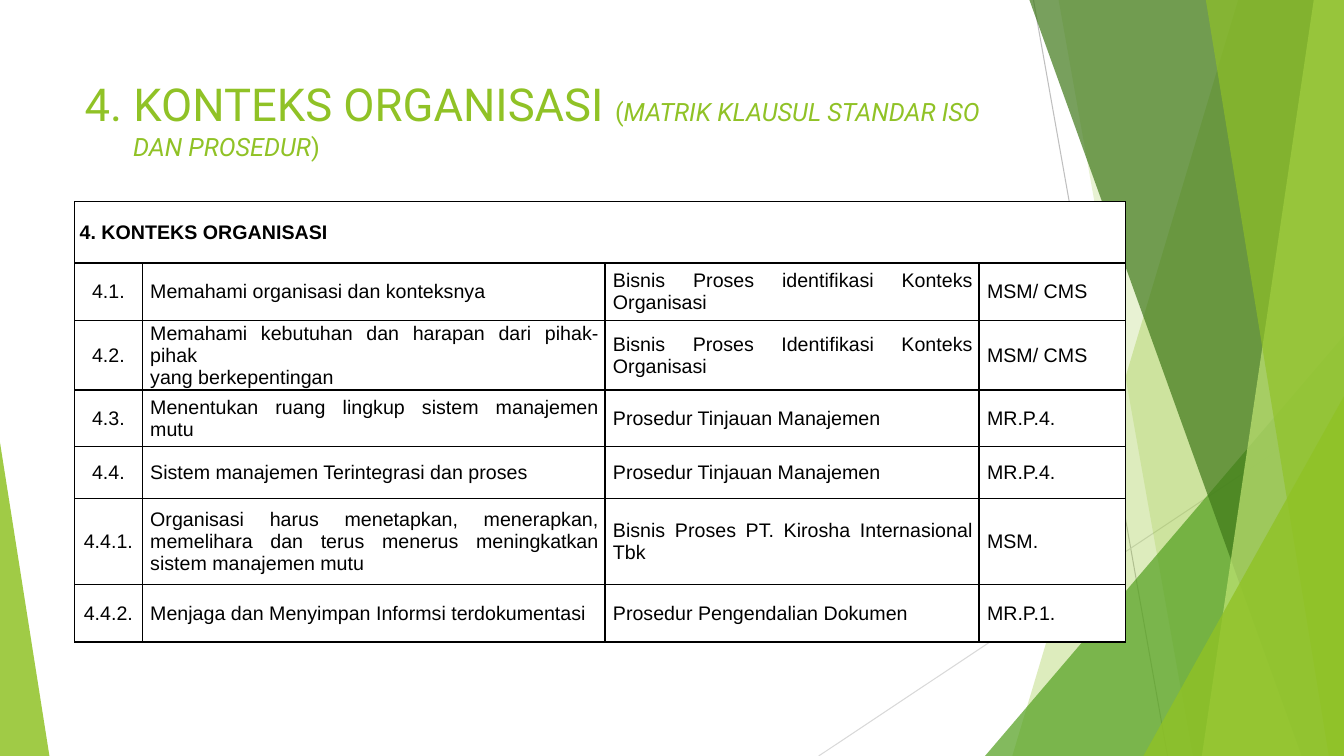
from lxml import etree
from pptx import Presentation
from pptx.dml.color import RGBColor
from pptx.enum.shapes import MSO_CONNECTOR, MSO_SHAPE
from pptx.enum.text import MSO_ANCHOR, MSO_AUTO_SIZE, PP_ALIGN
from pptx.oxml.ns import qn
from pptx.util import Inches, Pt

TRIANGLE = MSO_SHAPE.ISOSCELES_TRIANGLE
STRAIGHT = MSO_CONNECTOR.STRAIGHT
TOP, MIDDLE = MSO_ANCHOR.TOP, MSO_ANCHOR.MIDDLE
LEFT, CENTER, JUSTIFY = PP_ALIGN.LEFT, PP_ALIGN.CENTER, PP_ALIGN.JUSTIFY

WIDTH, HEIGHT = 13.33, 7.5
COLORS = {"lime": "90C226", "green": "54A021", "forest": "3F7819", "pale": "C0E474",
          "grey": "BFBFBF", "light grey": "D9D9D9", "black": "000000", "white": "FFFFFF"}

TITLE_RUNS = [
    ("4. KONTEKS ORGANISASI ", 32.4, False),
    ("(", 18, False),
    ("MATRIK KLAUSUL STANDAR ISO DAN PROSEDUR", 18, True),
    (")", 18, False),
]
TABLE_HEADING = "4. KONTEKS ORGANISASI"
CLAUSES = [
    ("4.1.", "Memahami organisasi dan konteksnya",
     "Bisnis Proses identifikasi Konteks Organisasi", "MSM/ CMS"),
    ("4.2.", "Memahami kebutuhan dan harapan dari pihak-pihak\nyang berkepentingan",
     "Bisnis Proses Identifikasi Konteks Organisasi", "MSM/ CMS"),
    ("4.3.", "Menentukan ruang lingkup sistem manajemen mutu",
     "Prosedur Tinjauan Manajemen", "MR.P.4."),
    ("4.4.", "Sistem manajemen Terintegrasi dan proses",
     "Prosedur Tinjauan Manajemen", "MR.P.4."),
    ("4.4.1.", "Organisasi harus menetapkan, menerapkan, memelihara dan terus menerus "
     "meningkatkan sistem manajemen mutu",
     "Bisnis Proses PT. Kirosha Internasional Tbk", "MSM."),
    ("4.4.2.", "Menjaga dan Menyimpan Informsi terdokumentasi",
     "Prosedur Pengendalian Dokumen", "MR.P.1."),
]
COLUMN_WIDTHS = [0.67, 4.59, 3.71, 1.45]
ROW_HEIGHTS = [0.61, 0.57, 0.69, 0.56, 0.52, 0.85, 0.57]
CONTENT_LEFT = 0.74

# Lines: start, end, colour
RAYS = [((10.25, 0), (11.58, HEIGHT), "grey"),
        ((WIDTH, 4.03), (8.12, HEIGHT), "light grey")]
# Wedges reach the right edge: top x, bottom x, colour, opacity %
# Triangles stand on the bottom edge: left, width, height, apex, colour, opacity %
FACETS = [
    ("wedge", 12.28, 10.04, "lime", 30),
    ("wedge", 10.5, 11.83, "lime", 20),
    ("triangle", 9.77, 3.56, 4.17, 1, "green", 72),
    ("wedge", 10.21, 12.91, "forest", 70),
    ("wedge", 13.03, 11.92, "pale", 70),
    ("wedge", 11.96, 13.18, "lime", 65),
    ("triangle", 11.34, 1.99, 3.57, 1, "lime", 80),
    ("triangle", 0, 0.49, 3.11, 0, "lime", 85),
]


def color(name):
    return RGBColor.from_string(COLORS[name])


def add_ray(shapes, start, end, color_name):
    ray = shapes.add_connector(STRAIGHT, *map(Inches, start + end))
    ray.line.color.rgb = color(color_name)
    ray.line.width = Pt(0.75)
    etree.SubElement(ray._element.spPr, qn("a:effectLst"))


def add_wedge(shapes, top_x, bottom_x):
    corners = [(WIDTH, 0), (WIDTH, HEIGHT), (bottom_x, HEIGHT)]
    builder = shapes.build_freeform(Inches(top_x), 0)
    builder.add_line_segments([(Inches(x), Inches(y)) for x, y in corners], close=True)
    return builder.convert_to_shape()


def add_triangle(shapes, left, width, height, apex):
    triangle = shapes.add_shape(
        TRIANGLE, *map(Inches, (left, HEIGHT - height, width, height)))
    triangle.adjustments[0] = apex
    return triangle


def add_backdrop(shapes):
    builders = {"wedge": add_wedge, "triangle": add_triangle}
    for ray in RAYS:
        add_ray(shapes, *ray)
    for kind, *geometry, color_name, opacity in FACETS:
        facet = builders[kind](shapes, *geometry)
        facet.shadow.inherit = False
        facet.line.fill.background()
        facet.fill.solid()
        facet.fill.fore_color.rgb = color(color_name)
        fill_color = facet._element.spPr.find(".//" + qn("a:srgbClr"))
        etree.SubElement(fill_color, qn("a:alpha"), val=str(opacity * 1000))


def set_format(target, **values):
    for name, value in values.items():
        setattr(target, name, value)


def indent(paragraph, margin, first_line=0):
    properties = paragraph._p.get_or_add_pPr()
    properties.set("marL", str(Inches(margin)))
    properties.set("indent", str(Inches(first_line)))


def fill_title(title):
    set_format(title, left=Inches(CONTENT_LEFT), top=Inches(0.67),
               width=Inches(9.4), height=Inches(0.89))
    set_format(title.text_frame, word_wrap=True, auto_size=MSO_AUTO_SIZE.NONE,
               vertical_anchor=TOP, margin_top=Inches(0.09))
    paragraph = title.text_frame.paragraphs[0]
    paragraph.alignment = LEFT
    indent(paragraph, 0.48, -0.48)
    for text, size, italic in TITLE_RUNS:
        run = paragraph.add_run()
        run.text = text
        set_format(run.font, name="Roboto", size=Pt(size), italic=italic)
        run.font.color.rgb = color("lime")


def add_borders(cell):
    properties = cell._tc.get_or_add_tcPr()
    for side in ("lnL", "lnR", "lnT", "lnB"):
        line = etree.SubElement(properties, qn("a:" + side), w=str(Pt(1)))
        fill = etree.SubElement(line, qn("a:solidFill"))
        etree.SubElement(fill, qn("a:srgbClr"), val=COLORS["black"])


def fill_cell(cell, text, alignment, margin, bold=False):
    add_borders(cell)
    cell.fill.solid()
    cell.fill.fore_color.rgb = color("white")
    set_format(cell, vertical_anchor=MIDDLE, margin_left=0, margin_top=0, margin_bottom=0,
               margin_right=Inches(0.06) if alignment == JUSTIFY else 0)
    cell.text = text
    for paragraph in cell.text_frame.paragraphs:
        paragraph.alignment = alignment
        indent(paragraph, margin)
        set_format(paragraph.font, name="Arial", size=Pt(14), bold=bold)
        paragraph.font.color.rgb = color("black")
        for run in paragraph.runs:
            set_format(run.font, name="Arial", size=Pt(14), bold=bold)
            run.font.color.rgb = color("black")


def add_clause_table(shapes):
    frame = shapes.add_table(
        len(ROW_HEIGHTS), len(COLUMN_WIDTHS), Inches(CONTENT_LEFT), Inches(2),
        Inches(sum(COLUMN_WIDTHS)), Inches(sum(ROW_HEIGHTS)))
    table = frame.table
    set_format(table, first_row=False, horz_banding=False)
    for column, width in zip(table.columns, COLUMN_WIDTHS):
        column.width = Inches(width)
    for row, height in zip(table.rows, ROW_HEIGHTS):
        row.height = Inches(height)
    last_column = len(COLUMN_WIDTHS) - 1
    for column in range(last_column + 1):
        fill_cell(table.cell(0, column), "" if column else TABLE_HEADING, LEFT, 0.05, bold=True)
    table.cell(0, 0).merge(table.cell(0, last_column))
    for row, clause in enumerate(CLAUSES, start=1):
        for column, text in enumerate(clause):
            alignment, margin = (JUSTIFY, 0.08) if column else (CENTER, 0)
            fill_cell(table.cell(row, column), text, alignment, margin)


def main():
    presentation = Presentation()
    set_format(presentation, slide_width=Inches(WIDTH), slide_height=Inches(HEIGHT))
    title_only = presentation.slide_layouts[5]
    slide = presentation.slides.add_slide(title_only)
    title = slide.shapes.title
    add_backdrop(slide.shapes)
    slide.shapes._spTree.append(title._element)
    fill_title(title)
    add_clause_table(slide.shapes)
    presentation.save("out.pptx")


if __name__ == "__main__":
    main()
